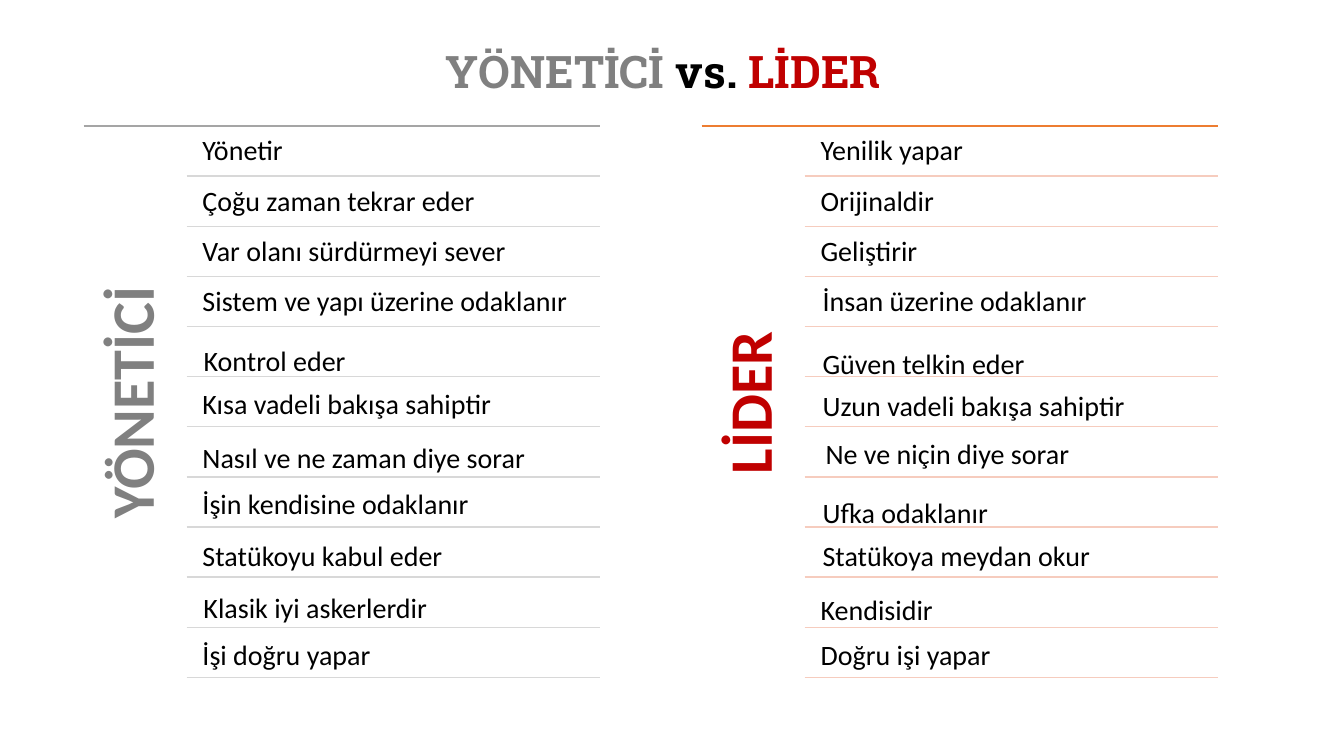
"""Build the manager versus leader comparison slide."""
from dataclasses import dataclass

import pptx
import pptx.dml.color
import pptx.enum.shapes
import pptx.enum.text
import pptx.oxml.ns
import pptx.oxml.xmlchemy
import pptx.slide
import pptx.text.text
import pptx.util
from pptx.util import Inches

COLORS = {
    "black": "000000", "grey": "808080", "red": "C00000",
    "grey_top": "A5A5A5", "grey_rule": "D8D8D8",
    "orange_top": "ED7D31", "orange_rule": "F6CCBE",
}
TOP, BOTTOM = 1.25, 6.72
COLUMN_WIDTH, RULE_INDENT = 5.12, 1.02


@dataclass
class Trait:
    text: str
    left: float
    top: float
    width: float


@dataclass
class Column:
    heading: str
    left: float
    color: str
    top_color: str
    rule_color: str
    traits: list[Trait]


COLUMNS = [
    Column("YÖNETİCİ", 0.83, "grey", "grey_top", "grey_rule", [
        Trait("Yönetir", 1.91, 1.27, 4.03),
        Trait("Çoğu zaman tekrar eder", 1.91, 1.77, 4.03),
        Trait("Var olanı sürdürmeyi sever", 1.91, 2.27, 4.03),
        Trait("Sistem ve yapı üzerine odaklanır", 1.91, 2.76, 4.65),
        Trait("Kontrol eder", 1.92, 3.36, 3.89),
        Trait("Kısa vadeli bakışa sahiptir", 1.91, 3.79, 4.05),
        Trait("Nasıl ve ne zaman diye sorar", 1.91, 4.32, 4.05),
        Trait("İşin kendisine odaklanır", 1.91, 4.78, 3.95),
        Trait("Statükoyu kabul eder", 1.91, 5.29, 3.29),
        Trait("Klasik iyi askerlerdir", 1.92, 5.81, 3.56),
        Trait("İşi doğru yapar", 1.91, 6.28, 3.48),
    ]),
    Column("LİDER", 6.96, "red", "orange_top", "orange_rule", [
        Trait("Yenilik yapar", 8.04, 1.27, 4.03),
        Trait("Orijinaldir", 8.04, 1.77, 4.03),
        Trait("Geliştirir", 8.04, 2.27, 4.03),
        Trait("İnsan üzerine odaklanır", 8.06, 2.76, 3.3),
        Trait("Güven telkin eder", 8.06, 3.39, 3.03),
        Trait("Uzun vadeli bakışa sahiptir", 8.06, 3.81, 3.75),
        Trait("Ne ve niçin diye sorar", 8.09, 4.28, 3.48),
        Trait("Ufka odaklanır", 8.06, 4.87, 3.52),
        Trait("Statükoya meydan okur", 8.06, 5.29, 3.48),
        Trait("Kendisidir", 8.04, 5.83, 3.6),
        Trait("Doğru işi yapar", 8.04, 6.28, 3.49),
    ]),
]


def rgb(name: str) -> pptx.dml.color.RGBColor:
    return pptx.dml.color.RGBColor.from_string(COLORS[name])


def set_font(font: pptx.text.text.Font, name: str, size: int, color: str, bold: bool) -> None:
    font.name = name
    font.size = pptx.util.Pt(size)
    font.bold = bold
    font.color.rgb = rgb(color)


def add_title(slide: pptx.slide.Slide) -> None:
    s = slide.shapes.title
    s.left, s.top, s.width, s.height = (Inches(v) for v in (0.83, 0.39, 11.5, 0.68))
    tf = s.text_frame
    tf.vertical_anchor = pptx.enum.text.MSO_ANCHOR.MIDDLE
    tf.auto_size = pptx.enum.text.MSO_AUTO_SIZE.NONE
    p = tf.paragraphs[0]
    p.alignment = pptx.enum.text.PP_ALIGN.CENTER
    p.line_spacing = 0.9
    for text, color in (("YÖNETİCİ", "grey"), (" vs. ", "black"), ("LİDER", "red")):
        r = p.add_run()
        r.text = text
        set_font(r.font, "Roboto Slab", 32, color, True)


def add_rule(slide: pptx.slide.Slide, left: float, right: float, y: float, color: str) -> None:
    s = slide.shapes.add_connector(
        pptx.enum.shapes.MSO_CONNECTOR.STRAIGHT,
        Inches(left), Inches(y), Inches(right), Inches(y))
    s.line.color.rgb = rgb(color)
    s.line.width = pptx.util.Pt(1)
    s.element.spPr.append(pptx.oxml.xmlchemy.OxmlElement("a:effectLst"))


def add_heading(slide: pptx.slide.Slide, column: Column) -> None:
    s = slide.shapes.add_textbox(Inches(column.left), Inches(TOP), Inches(1.03), Inches(5.49))
    tf = s.text_frame
    tf.word_wrap = True
    tf.margin_left = tf.margin_top = tf.margin_right = tf.margin_bottom = Inches(0.18)
    s.element.find(pptx.oxml.ns.qn("p:txBody")).bodyPr.set("vert", "vert270")
    p = tf.paragraphs[0]
    p.text = column.heading
    p.alignment = pptx.enum.text.PP_ALIGN.CENTER
    p.line_spacing = 0.9
    set_font(p.font, "Calibri", 43, column.color, True)


def add_trait(slide: pptx.slide.Slide, trait: Trait) -> None:
    s = slide.shapes.add_textbox(
        Inches(trait.left), Inches(trait.top), Inches(trait.width), Inches(0.44))
    tf = s.text_frame
    tf.word_wrap = True
    tf.auto_size = pptx.enum.text.MSO_AUTO_SIZE.SHAPE_TO_FIT_TEXT
    p = tf.paragraphs[0]
    p.text = trait.text
    set_font(p.font, "Calibri", 20, "black", False)


def add_column(slide: pptx.slide.Slide, column: Column) -> None:
    right = column.left + COLUMN_WIDTH
    pitch = (BOTTOM - TOP) / len(column.traits)
    add_rule(slide, column.left, right, TOP, column.top_color)
    add_heading(slide, column)
    for row, trait in enumerate(column.traits, start=1):
        add_rule(slide, column.left + RULE_INDENT, right, TOP + row * pitch, column.rule_color)
        add_trait(slide, trait)


def main() -> None:
    prs = pptx.Presentation()
    prs.slide_width, prs.slide_height = Inches(13.33), Inches(7.5)
    slide = prs.slides.add_slide(prs.slide_layouts[5])
    add_title(slide)
    for column in COLUMNS:
        add_column(slide, column)
    prs.save("out.pptx")


if __name__ == "__main__":
    main()
